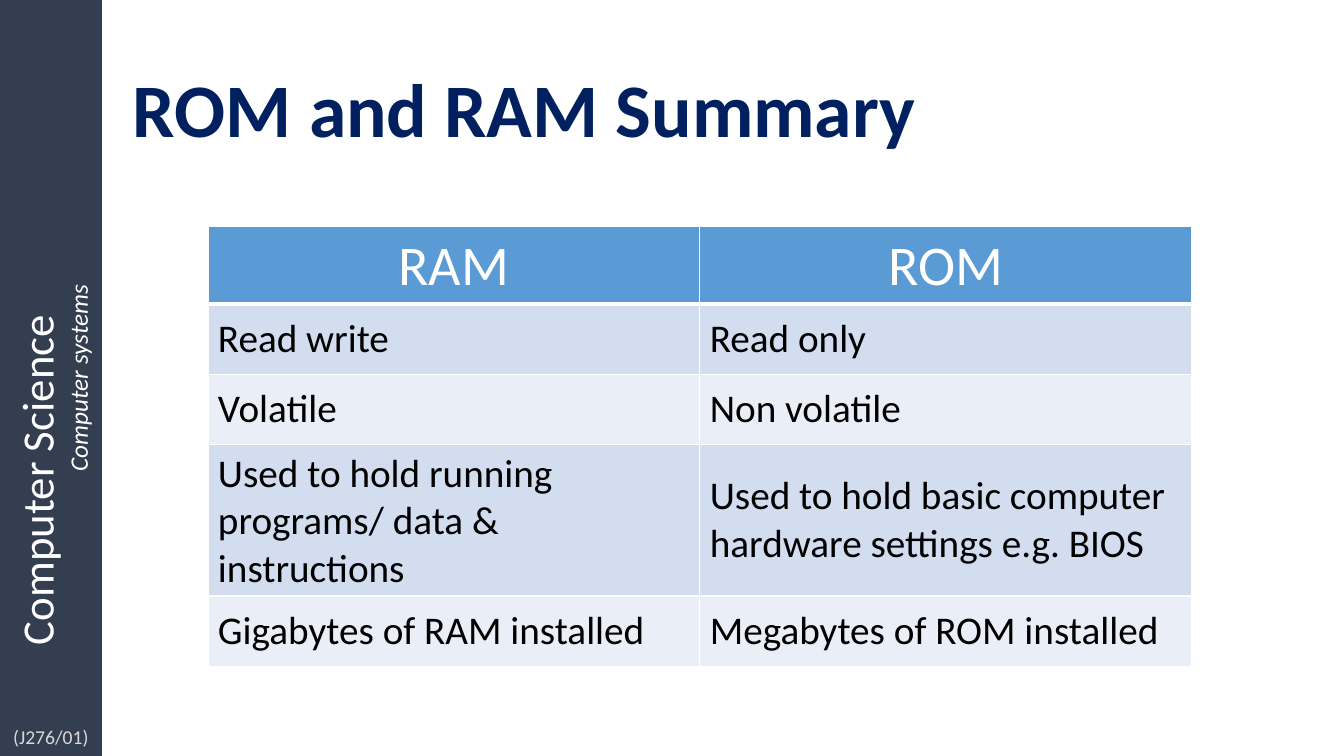
from lxml import etree
from pptx import Presentation
from pptx import util as u
from pptx.dml.color import RGBColor
from pptx.enum import shapes, text
from pptx.oxml.ns import qn

PX = 9525
NAVY, SLATE, WHITE, BLACK = "002060", "333F50", "FFFFFF", "000000"
HEADER_FILL, ROW_FILLS = "5B9BD5", ("D2DEEF", "EAEFF7")

MEMORY_ROWS = [
    ("RAM", "ROM"),
    ("Read write", "Read only"),
    ("Volatile", "Non volatile"),
    ("Used to hold running programs/ data & instructions",
     "Used to hold basic computer hardware settings e.g. BIOS"),
    ("Gigabytes of RAM installed", "Megabytes of ROM installed"),
]


def color(hex_string):
    return RGBColor.from_string(hex_string)


class SlideBuilder:
    font = "Calibri"

    def __init__(self, presentation):
        self.slide = presentation.slides.add_slide(presentation.slide_layouts[5])

    def box(self, *lengths):
        return [u.Emu(length * PX) for length in lengths]

    def run(self, paragraph, words, size, hex_string, bold=False, italic=False,
            align=text.PP_ALIGN.LEFT):
        paragraph.alignment = align
        run = paragraph.add_run()
        run.text = words
        font = run.font
        font.name, font.size = self.font, u.Pt(size)
        font.bold, font.italic = bold, italic
        font.color.rgb = color(hex_string)

    def title(self, words, *lengths):
        shape = self.slide.shapes.title
        shape.left, shape.top, shape.width, shape.height = self.box(*lengths)
        frame = shape.text_frame
        frame.vertical_anchor = text.MSO_ANCHOR.MIDDLE
        frame.auto_size = text.MSO_AUTO_SIZE.NONE
        paragraph = frame.paragraphs[0]
        paragraph.line_spacing = 0.9
        self.run(paragraph, words, 54, NAVY, bold=True)

    def sidebar(self, subject, unit, *lengths):
        shape = self.slide.shapes.add_shape(
            shapes.MSO_SHAPE.RECTANGLE, *self.box(*lengths))
        shape.shadow.inherit = False
        shape.fill.solid()
        shape.fill.fore_color.rgb = color(SLATE)
        shape.line.color.rgb = color(SLATE)
        shape.line.width = u.Pt(1)
        frame = shape.text_frame
        frame.word_wrap = True
        frame.vertical_anchor = text.MSO_ANCHOR.MIDDLE
        frame._txBody.bodyPr.set("vert", "vert270")
        paragraph = frame.paragraphs[0]
        paragraph._p.get_or_add_pPr().set("marL", str(96 * PX))
        self.run(paragraph, subject, 32, WHITE)
        self.run(frame.add_paragraph(), unit, 18, WHITE, italic=True,
                 align=text.PP_ALIGN.CENTER)

    def label(self, words, *lengths):
        frame = self.slide.shapes.add_textbox(*self.box(*lengths)).text_frame
        frame.word_wrap = True
        self.run(frame.paragraphs[0], words, 14, "D9D9D9",
                 align=text.PP_ALIGN.CENTER)

    def borders(self, cell, bottom):
        properties = cell._tc.get_or_add_tcPr()
        for side, width in zip("LRTB", (1, 1, 1, bottom)):
            line = etree.SubElement(properties, qn(f"a:ln{side}"),
                                    w=str(u.Pt(width)))
            fill = etree.SubElement(line, qn("a:solidFill"))
            etree.SubElement(fill, qn("a:srgbClr"), val=WHITE)

    def cell(self, cell, words, row):
        header = row == 0
        self.borders(cell, 3 if header else 1)
        cell.fill.solid()
        cell.fill.fore_color.rgb = color(
            HEADER_FILL if header else ROW_FILLS[(row - 1) % 2])
        paragraph = cell.text_frame.paragraphs[0]
        if header:
            self.run(paragraph, words, 40, WHITE, align=text.PP_ALIGN.CENTER)
        else:
            cell.vertical_anchor = text.MSO_ANCHOR.MIDDLE
            self.run(paragraph, words, 28, BLACK)

    def table(self, rows, heights, *lengths):
        table = self.slide.shapes.add_table(
            len(rows), len(rows[0]), *self.box(*lengths)).table
        for row, (entries, height) in enumerate(zip(rows, heights)):
            table.rows[row].height = u.Emu(height * PX)
            for column, words in enumerate(entries):
                self.cell(table.cell(row, column), words, row)


def main():
    presentation = Presentation()
    presentation.slide_width = u.Emu(1280 * PX)
    presentation.slide_height = u.Emu(720 * PX)
    builder = SlideBuilder(presentation)
    builder.sidebar("Computer Science", "Computer systems", 0, 0, 97, 720)
    builder.label("(J276/01)", 0, 686, 97, 33)
    builder.title("ROM and RAM Summary", 117, 38, 1074, 139)
    heights = [55] + [67] * (len(MEMORY_ROWS) - 1)
    builder.table(MEMORY_ROWS, heights, 198, 216, 937, sum(heights))
    presentation.save("out.pptx")


if __name__ == "__main__":
    main()
